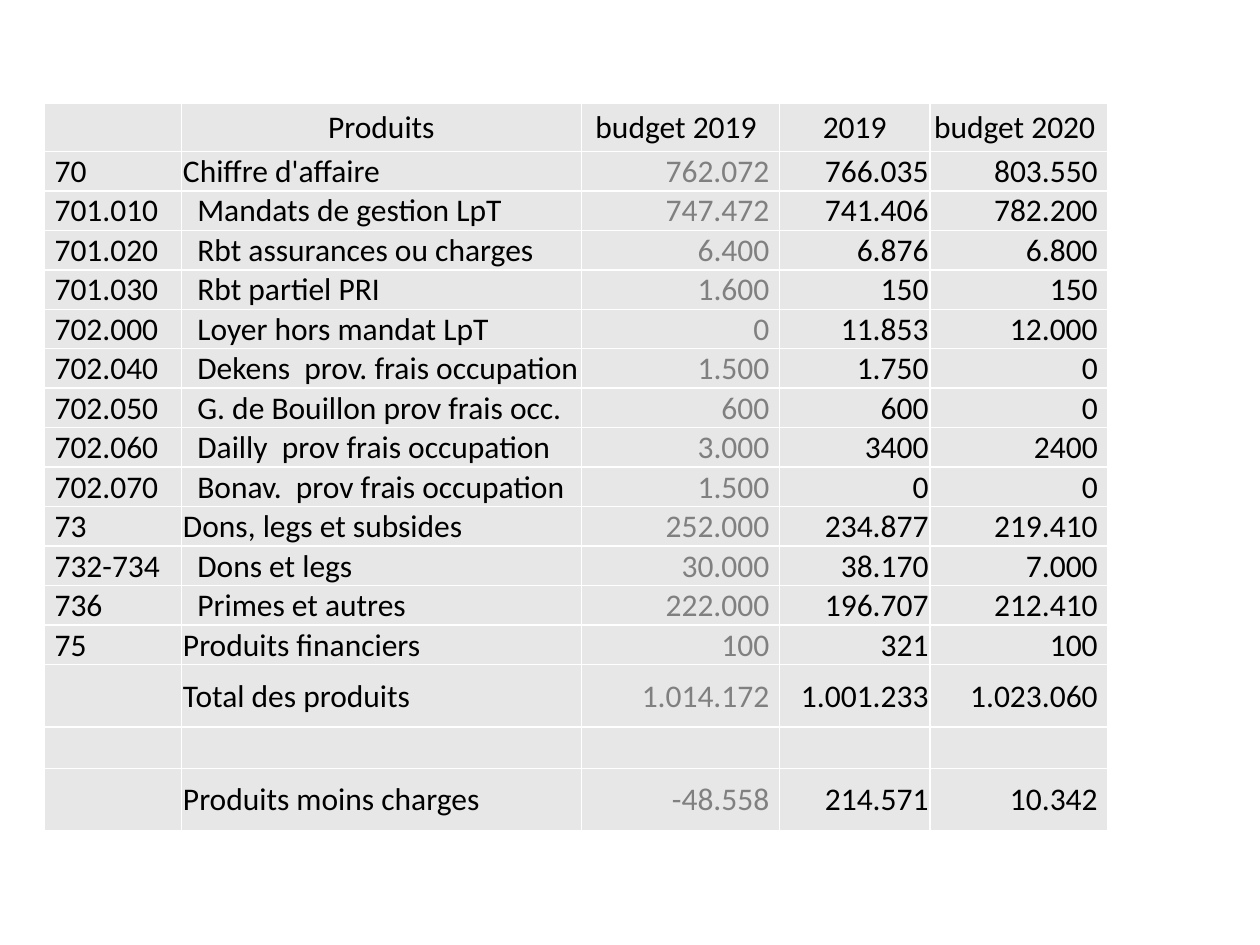
from lxml import etree
from pptx import Presentation
from pptx import util as u
from pptx.dml import color
from pptx.enum import text
from pptx.oxml import ns

HUES = {"cell": "E7E7E7", "edge": "FFFFFF", "ink": "000000", "past": "808080"}
LEFT, MID, RIGHT = text.PP_ALIGN.LEFT, text.PP_ALIGN.CENTER, text.PP_ALIGN.RIGHT

# width, left inset, right inset (cm), alignment, text hue
COLS = [
    (2.76, 0.2, 0.03, LEFT, "ink"),
    (8.06, 0.03, 0.03, LEFT, "ink"),
    (3.99, 0.03, 0.2, RIGHT, "past"),
    (3.04, 0.03, 0.03, RIGHT, "ink"),
    (3.58, 0.03, 0.2, RIGHT, "ink"),
]
INDENT = 0.29

# kind of row: height (cm), anchor
KINDS = {
    "head": (0.96, text.MSO_ANCHOR.MIDDLE),
    "group": (0.79, text.MSO_ANCHOR.BOTTOM),
    "item": (0.79, text.MSO_ANCHOR.BOTTOM),
    "total": (1.26, text.MSO_ANCHOR.MIDDLE),
    "gap": (0.83, text.MSO_ANCHOR.MIDDLE),
}

ROWS = [
    ("head", "", "Produits", "budget 2019", "2019", "budget 2020"),
    ("group", "70", "Chiffre d'affaire", "762.072", "766.035", "803.550"),
    ("item", "701.010", "Mandats de gestion LpT", "747.472", "741.406", "782.200"),
    ("item", "701.020", "Rbt assurances ou charges", "6.400", "6.876", "6.800"),
    ("item", "701.030", "Rbt partiel PRI", "1.600", "150", "150"),
    ("item", "702.000", "Loyer hors mandat LpT", "0", "11.853", "12.000"),
    ("item", "702.040", "Dekens  prov. frais occupation", "1.500", "1.750", "0"),
    ("item", "702.050", "G. de Bouillon prov frais occ.", "600", "600", "0"),
    ("item", "702.060", "Dailly  prov frais occupation", "3.000", "3400", "2400"),
    ("item", "702.070", "Bonav.  prov frais occupation", "1.500", "0", "0"),
    ("group", "73", "Dons, legs et subsides", "252.000", "234.877", "219.410"),
    ("item", "732-734", "Dons et legs", "30.000", "38.170", "7.000"),
    ("item", "736", "Primes et autres", "222.000", "196.707", "212.410"),
    ("group", "75", "Produits financiers", "100", "321", "100"),
    ("total", "", "Total des produits", "1.014.172", "1.001.233", "1.023.060"),
    ("gap", "", "", "", "", ""),
    ("total", "", "Produits moins charges", "-48.558", "214.571", "10.342"),
]


def apply(item, form):
    for name, value in form.items():
        setattr(item, name, value)


def rgb(hue):
    return color.RGBColor.from_string(HUES[hue])


def edge(cell):
    """Draw a thin line on all four sides of the cell."""
    props = cell._tc.get_or_add_tcPr()
    for side in ("a:lnL", "a:lnR", "a:lnT", "a:lnB"):
        line = etree.SubElement(props, ns.qn(side), w=str(u.Pt(1)))
        fill = etree.SubElement(line, ns.qn("a:solidFill"))
        etree.SubElement(fill, ns.qn("a:srgbClr"), val=HUES["edge"])


def fill_cell(cell, words, kind, col):
    _, left, right, align, hue = COLS[col]
    if kind == "item" and col == 1:
        left += INDENT
    edge(cell)
    cell.fill.solid()
    cell.fill.fore_color.rgb = rgb("cell")
    apply(cell, {
        "margin_left": u.Cm(left),
        "margin_right": u.Cm(right),
        "margin_top": u.Cm(0.02),
        "margin_bottom": 0,
        "vertical_anchor": KINDS[kind][1],
    })
    if not words:
        return
    head = kind == "head"
    para = cell.text_frame.paragraphs[0]
    para.alignment = MID if head else align
    run = para.add_run()
    run.text = words
    apply(run.font, {"name": "Calibri", "size": u.Pt(18), "bold": False})
    run.font.color.rgb = rgb("ink" if head else hue)


def add_grid(slide):
    wide = sum(col[0] for col in COLS)
    high = sum(KINDS[row[0]][0] for row in ROWS)
    grid = slide.shapes.add_table(
        len(ROWS), len(COLS), u.Cm(0.9), u.Cm(2.09), u.Cm(wide), u.Cm(high)
    ).table
    apply(grid, {"first_row": False, "horz_banding": False})
    for col, form in zip(grid.columns, COLS):
        col.width = u.Cm(form[0])
    for row, (kind, *cells) in zip(grid.rows, ROWS):
        row.height = u.Cm(KINDS[kind][0])
        for col, words in enumerate(cells):
            fill_cell(row.cells[col], words, kind, col)


def main():
    deck = Presentation()
    apply(deck, {"slide_width": u.Cm(25.4), "slide_height": u.Cm(19.05)})
    add_grid(deck.slides.add_slide(deck.slide_layouts[6]))
    deck.save("out.pptx")


if __name__ == "__main__":
    main()
